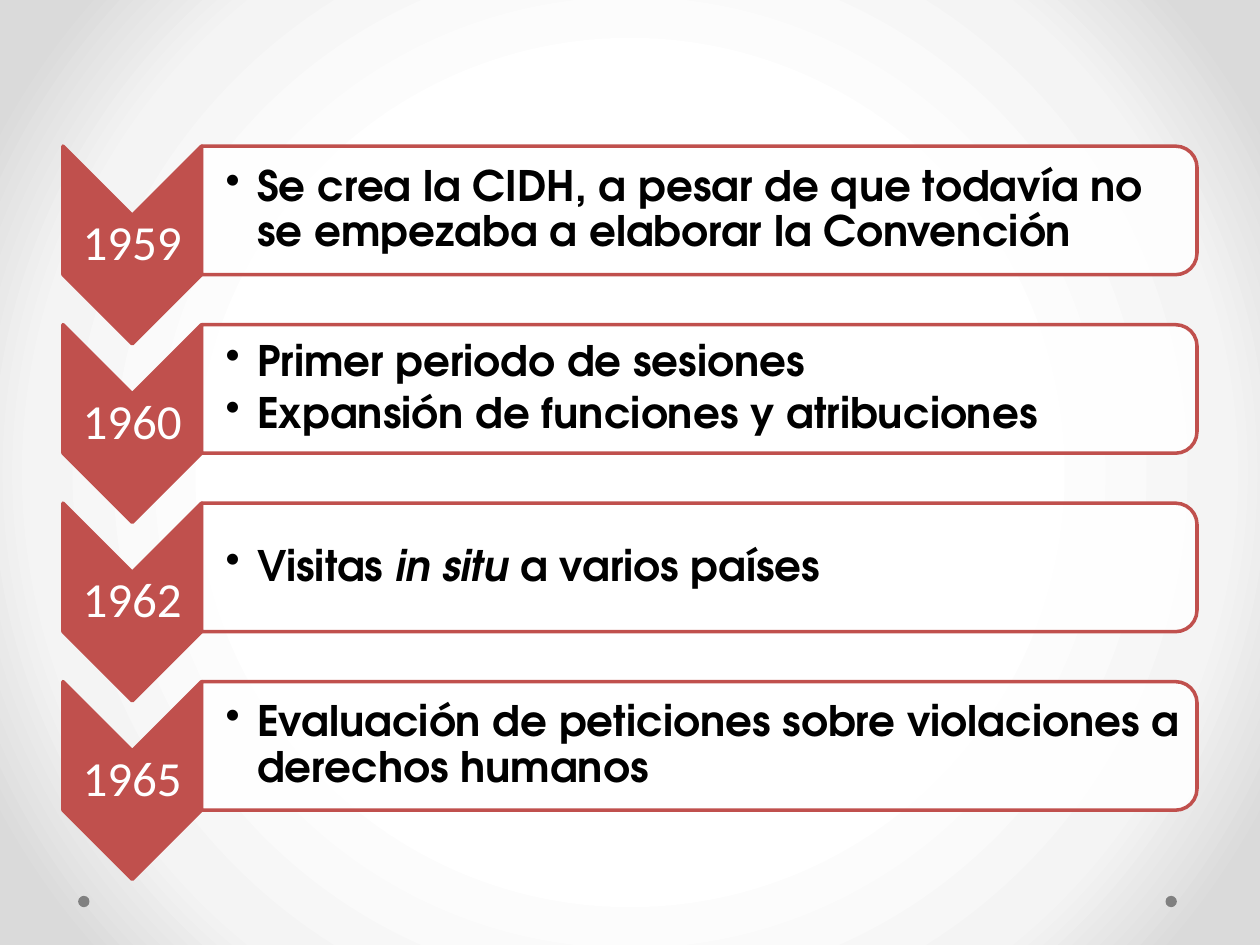
from lxml.etree import SubElement
from pptx import Presentation
from pptx.dml.color import RGBColor
from pptx.enum.shapes import MSO_SHAPE as Preset
from pptx.enum.text import MSO_ANCHOR as Anchor, PP_ALIGN as Align
from pptx.oxml import parse_xml
from pptx.oxml.ns import nsdecls, qn
from pptx.util import Inches, Pt

MILESTONES = [
    ("1959", [[("Se crea la CIDH, a pesar de que todavía no se empezaba a elaborar la Convención", False)]]),
    ("1960", [[("Primer periodo de sesiones", False)],
              [("Expansión de funciones y atribuciones", False)]]),
    ("1962", [[("Visitas ", False), ("in situ ", True), ("a varios países", False)]]),
    ("1965", [[("Evaluación de peticiones sobre violaciones a derechos humanos", False)]]),
]
BACKDROP_STOPS = [(50, "FFFFFF"), (76, "F4F4F4"), (92, "DADADA")]
DOT_LEFTS = [0.62, 9.25]

RED = RGBColor(0xC0, 0x50, 0x4D)
WHITE = RGBColor(0xFF, 0xFF, 0xFF)
BLACK = RGBColor(0, 0, 0)
GRAY = RGBColor(0x80, 0x80, 0x80)

FIRST_TOP, LAST_TOP = 1.16, 5.41
PITCH = (LAST_TOP - FIRST_TOP) / (len(MILESTONES) - 1)
ARROW_LEFT, ARROW_WIDTH, ARROW_HEIGHT = 0.5, 1.1, 1.57
BAR_LEFT, BAR_WIDTH, BAR_HEIGHT = 1.6, 7.9, 1.02
INSET = 0.02


def paint_backdrop(slide):
    stops = "".join(
        f'<a:gs pos="{position * 1000}"><a:srgbClr val="{color}"/></a:gs>'
        for position, color in BACKDROP_STOPS)
    slide.element.cSld.insert(0, parse_xml(
        f'<p:bg {nsdecls("p", "a")}><p:bgPr><a:gradFill rotWithShape="1">'
        f'<a:gsLst>{stops}</a:gsLst><a:path path="circle">'
        '<a:fillToRect l="50000" t="50000" r="50000" b="50000"/></a:path>'
        '</a:gradFill><a:effectLst/></p:bgPr></p:bg>'))


def add_filled(slide, preset, left, top, width, height, color):
    shape = slide.shapes.add_shape(
        preset, Inches(left), Inches(top), Inches(width), Inches(height))
    shape.shadow.inherit = False
    shape.fill.solid()
    shape.fill.fore_color.rgb = color
    shape.line.fill.background()
    return shape


def add_turned(slide, preset, left, top, width, height, color):
    shift = (width - height) / 2
    shape = add_filled(slide, preset, left + shift, top - shift, height, width, color)
    shape.rotation = 90
    shape.line.color.rgb = RED
    shape.line.width = Pt(2)
    return shape


def add_text_frame(slide, left, top, width, height, left_inset=INSET):
    frame = slide.shapes.add_textbox(
        Inches(left), Inches(top), Inches(width), Inches(height)).text_frame
    frame.word_wrap = True
    frame.vertical_anchor = Anchor.MIDDLE
    frame.margin_left = Inches(left_inset)
    frame.margin_top = frame.margin_right = frame.margin_bottom = Inches(INSET)
    return frame


def style_run(run, font_name, size, color):
    run.font.name = font_name
    run.font.size = Pt(size)
    run.font.color.rgb = color


def add_year(slide, year, top):
    add_turned(slide, Preset.CHEVRON, ARROW_LEFT, top, ARROW_WIDTH, ARROW_HEIGHT, RED)
    frame = add_text_frame(slide, ARROW_LEFT, top + ARROW_WIDTH / 2, ARROW_WIDTH,
                           ARROW_HEIGHT - ARROW_WIDTH)
    label = frame.paragraphs[0]
    label.text = year
    label.alignment = Align.CENTER
    label.line_spacing = 0.9
    style_run(label.runs[0], "Calibri", 28, WHITE)


def add_events(slide, events, top):
    bar = add_turned(slide, Preset.ROUND_2_SAME_RECTANGLE,
                     BAR_LEFT, top, BAR_WIDTH, BAR_HEIGHT, WHITE)
    fill_color = bar.fill._xPr.find(qn("a:solidFill"))[0]
    SubElement(fill_color, qn("a:alpha")).set("val", "90000")
    frame = add_text_frame(slide, BAR_LEFT, top + 0.05, BAR_WIDTH - 0.05,
                           BAR_HEIGHT - 0.1, left_inset=0.19)
    for index, event in enumerate(events):
        paragraph = frame.add_paragraph() if index else frame.paragraphs[0]
        paragraph.level = 1
        paragraph.line_spacing = 0.9
        paragraph.space_after = Pt(3.6)
        properties = paragraph._p.get_or_add_pPr()
        properties.set("marL", str(Inches(0.25)))
        properties.set("indent", str(Inches(-0.25)))
        SubElement(properties, qn("a:buChar")).set("char", "•")
        for words, italic in event:
            run = paragraph.add_run()
            run.text = words
            style_run(run, "TeX Gyre Adventor", 24, BLACK)
            run.font.bold = True
            run.font.italic = italic


def main():
    deck = Presentation()
    deck.slide_width, deck.slide_height = Inches(10), Inches(7.5)
    slide = deck.slides.add_slide(deck.slide_layouts[6])
    paint_backdrop(slide)
    for left in DOT_LEFTS:
        add_filled(slide, Preset.OVAL, left, 7.11, 0.09, 0.09, GRAY)
    for row, (year, events) in enumerate(MILESTONES):
        top = FIRST_TOP + row * PITCH
        add_year(slide, year, top)
        add_events(slide, events, top)
    deck.save("out.pptx")


if __name__ == "__main__":
    main()
